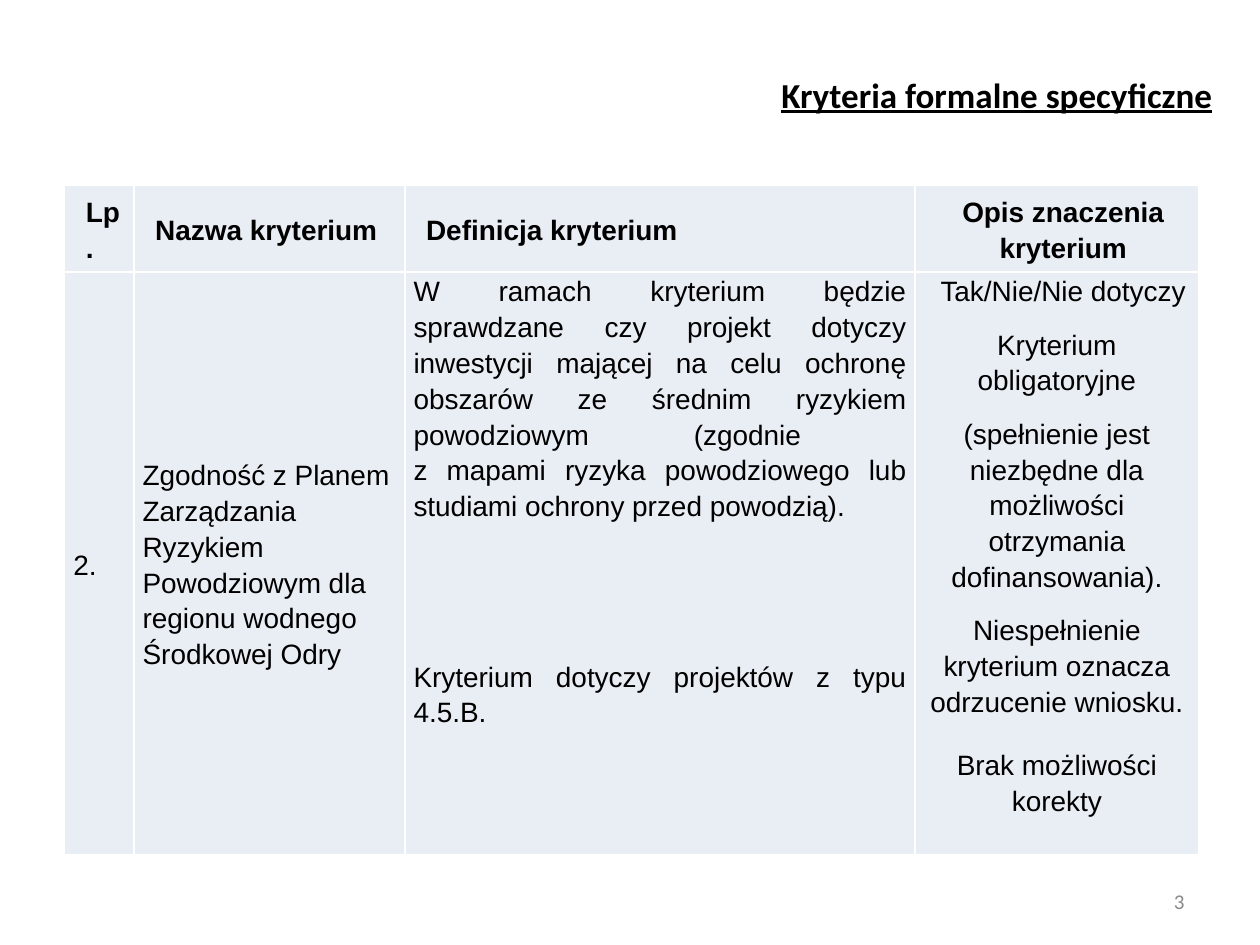
import pptx
import pptx.dml.color
import pptx.enum.text
import pptx.oxml
import pptx.oxml.ns
import pptx.util

Pt = pptx.util.Pt
ALIGN = pptx.enum.text.PP_ALIGN
ANCHOR = pptx.enum.text.MSO_ANCHOR
BLACK = pptx.dml.color.RGBColor(0x00, 0x00, 0x00)
GREY = pptx.dml.color.RGBColor(0x89, 0x89, 0x89)
WHITE = pptx.dml.color.RGBColor(0xFF, 0xFF, 0xFF)
CELL_FILL = pptx.dml.color.RGBColor(0xE9, 0xED, 0xF4)

COLUMN_WIDTHS = (39.6, 154.8, 291.6, 162)
ROW_HEIGHTS = (49.7, 332)
INDENT = 7.2

HEADINGS = (
    ("Lp.", ALIGN.LEFT),
    ("Nazwa kryterium", ALIGN.LEFT),
    ("Definicja kryterium", ALIGN.LEFT),
    ("Opis znaczenia kryterium", ALIGN.CENTER),
)
CRITERION_NAME = (
    "Zgodność z Planem Zarządzania Ryzykiem Powodziowym "
    "dla regionu wodnego Środkowej Odry"
)
DEFINITION = (
    "W ramach kryterium będzie sprawdzane czy projekt dotyczy inwestycji "
    "mającej na celu ochronę obszarów ze średnim ryzykiem powodziowym (zgodnie \n"
    "z mapami ryzyka powodziowego lub studiami ochrony przed powodzią)."
)
PROJECT_TYPE = "Kryterium dotyczy projektów z typu 4.5.B."
MEANING = (
    ("Tak/Nie/Nie dotyczy", 0, 10, INDENT),
    ("Kryterium obligatoryjne", 0, 10, 0),
    ("(spełnienie jest niezbędne dla możliwości otrzymania dofinansowania).", 0, 10, 0),
    ("Niespełnienie kryterium oznacza odrzucenie wniosku.", 0, 10, 0),
    ("Brak możliwości korekty", 6, 6, 0),
)


def style_font(font, name, size, color, bold=False):
    """Set the typeface, size, colour and weight of a font."""
    font.name = name
    font.size = Pt(size)
    font.bold = bold
    font.color.rgb = color


def add_title(slide, left, top, width, height):
    """Place the underlined slide title in its placeholder."""
    title = slide.shapes.title
    title.left, title.top, title.width, title.height = map(
        Pt, (left, top, width, height))
    frame = title.text_frame
    frame.vertical_anchor = ANCHOR.TOP
    frame.word_wrap = True
    frame.auto_size = pptx.enum.text.MSO_AUTO_SIZE.SHAPE_TO_FIT_TEXT
    heading = frame.paragraphs[0]
    heading.text = "Kryteria formalne specyficzne"
    heading.alignment = ALIGN.RIGHT
    style_font(heading.font, "Calibri", 20, BLACK, bold=True)
    heading.font.underline = True


def add_page_number(slide, left, top, width, height):
    """Place the page number at the bottom right."""
    box = slide.shapes.add_textbox(*map(Pt, (left, top, width, height)))
    frame = box.text_frame
    frame.word_wrap = True
    frame.vertical_anchor = ANCHOR.MIDDLE
    number = frame.paragraphs[0]
    number.text = "3"
    number.alignment = ALIGN.RIGHT
    style_font(number.font, "Calibri", 12, GREY)


def add_borders(cell):
    """Draw thin white lines on the four sides of a cell."""
    properties = cell._tc.get_or_add_tcPr()
    for position, side in enumerate(("lnL", "lnR", "lnT", "lnB")):
        properties.insert(position, pptx.oxml.parse_xml(
            f'<a:{side} {pptx.oxml.ns.nsdecls("a")} w="{Pt(1)}"><a:solidFill>'
            f'<a:srgbClr val="{WHITE}"/></a:solidFill></a:{side}>'))


def fill_cell(cell, entries, alignment, anchor, bold=False):
    """Write entries of text, space before, space after and indent in a cell."""
    cell.fill.solid()
    cell.fill.fore_color.rgb = CELL_FILL
    add_borders(cell)
    cell.vertical_anchor = anchor
    cell.margin_left = cell.margin_right = Pt(5)
    cell.margin_top = cell.margin_bottom = Pt(0)
    frame = cell.text_frame
    for index, (text, before, after, indent) in enumerate(entries):
        paragraph = frame.add_paragraph() if index else frame.paragraphs[0]
        paragraph.text = text
        paragraph.alignment = alignment
        paragraph.line_spacing = 1.15
        if before:
            paragraph.space_before = Pt(before)
        paragraph.space_after = Pt(after)
        if indent:
            paragraph._p.get_or_add_pPr().set("marL", str(Pt(indent)))
        style_font(paragraph.font, "Arial", 16, BLACK, bold)


def add_criteria_table(slide, left, top):
    """Place the table with a heading row and one criterion."""
    table = slide.shapes.add_table(
        len(ROW_HEIGHTS), len(COLUMN_WIDTHS), Pt(left), Pt(top),
        Pt(sum(COLUMN_WIDTHS)), Pt(sum(ROW_HEIGHTS))).table
    table.horz_banding = False
    for column, width in zip(table.columns, COLUMN_WIDTHS):
        column.width = Pt(width)
    for row, height in zip(table.rows, ROW_HEIGHTS):
        row.height = Pt(height)
    for column, (heading, alignment) in enumerate(HEADINGS):
        fill_cell(table.cell(0, column), [(heading, 0, 10, INDENT)],
                  alignment, ANCHOR.MIDDLE, bold=True)
    criterion = (
        ([("2.", 0, 6, 0)], ALIGN.LEFT, ANCHOR.MIDDLE),
        ([(CRITERION_NAME, 0, 6, 0)], ALIGN.LEFT, ANCHOR.MIDDLE),
        ([(DEFINITION, 0, 6, 0), (PROJECT_TYPE, 71, 6, 0)],
         ALIGN.JUSTIFY, ANCHOR.TOP),
        (MEANING, ALIGN.CENTER, ANCHOR.TOP),
    )
    for column, content in enumerate(criterion):
        fill_cell(table.cell(1, column), *content)


def main():
    """Build the slide and save it."""
    presentation = pptx.Presentation()
    presentation.slide_width = Pt(720)
    presentation.slide_height = Pt(540)
    slide = presentation.slides.add_slide(presentation.slide_layouts[5])
    add_page_number(slide, 516, 500.5, 168, 28.8)
    add_title(slide, 303, 38.2, 397, 31.7)
    add_criteria_table(slide, 36.9, 105.8)
    presentation.save("out.pptx")


if __name__ == "__main__":
    main()
